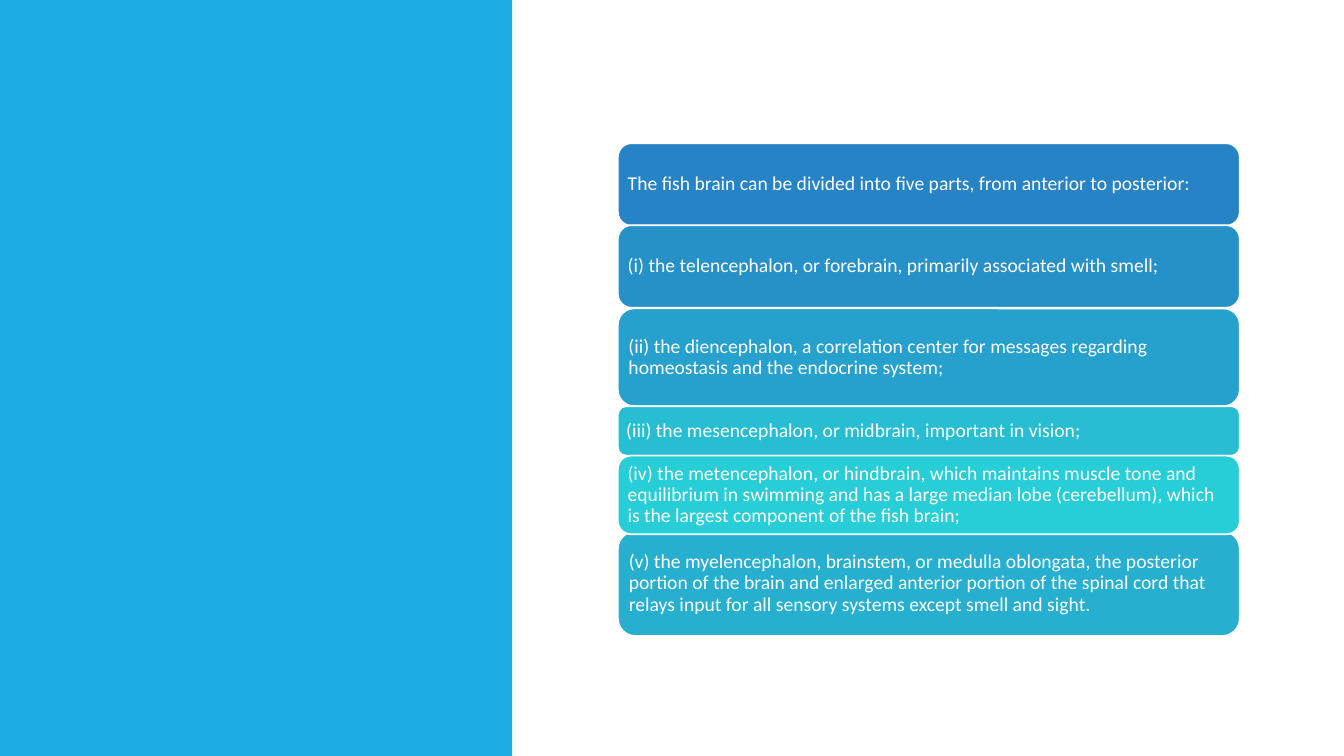
from dataclasses import dataclass

from pptx import Presentation
from pptx import util as u
from pptx.dml.color import RGBColor
from pptx.enum import shapes, text
from pptx.shapes.autoshape import Shape
from pptx.slide import Slide

PAGE_WIDTH, PAGE_HEIGHT = 960, 540
PANEL_WIDTH = 365.76
CARD_LEFT, CARD_WIDTH = 441.36, 444.24
WHITE = "FFFFFF"


@dataclass(frozen=True)
class Card:
    top: float
    height: float
    fill: str
    wording: str


# Back to front: the last part lies behind the third and fourth
CARDS = [
    Card(102.24, 59.04, "2683C6",
         "The fish brain can be divided into five parts, from anterior to posterior:"),
    Card(160.8, 59.04, "2691C9",
         "(i) the telencephalon, or forebrain, primarily associated with smell;"),
    Card(220.32, 69.84, "26A0CD",
         "(ii) the diencephalon, a correlation center for messages regarding "
         "homeostasis and the endocrine system;"),
    Card(379.44, 74.88, "27AFD0",
         "(v) the myelencephalon, brainstem, or medulla oblongata, the posterior "
         "portion of the brain and enlarged anterior portion of the spinal cord that "
         "relays input for all sensory systems except smell and sight."),
    Card(290.16, 35.28, "27BED4",
         "(iii) the mesencephalon, or midbrain, important in vision;"),
    Card(325.44, 56.16, "27CED7",
         "(iv) the metencephalon, or hindbrain, which maintains muscle tone and "
         "equilibrium in swimming and has a large median lobe (cerebellum), which "
         "is the largest component of the fish brain;"),
]

FRAME_FORMAT = {
    "word_wrap": True,
    "vertical_anchor": text.MSO_ANCHOR.MIDDLE,
    **{f"margin_{side}": u.Pt(4.2) for side in ("left", "top", "right", "bottom")},
}
PARAGRAPH_FORMAT = {"alignment": text.PP_ALIGN.LEFT, "line_spacing": 0.9}
FONT_FORMAT = {"name": "Calibri", "size": u.Pt(14)}


def colour(value: str) -> RGBColor:
    return RGBColor.from_string(value)


def apply_format(target: object, values: dict) -> None:
    for name, value in values.items():
        setattr(target, name, value)


def add_box(page: Slide, kind: shapes.MSO_SHAPE, left: float, top: float,
            width: float, height: float, fill: str) -> Shape:
    box = page.shapes.add_shape(kind, u.Pt(left), u.Pt(top), u.Pt(width), u.Pt(height))
    box.shadow.inherit = False
    box.fill.solid()
    box.fill.fore_color.rgb = colour(fill)
    box.line.fill.background()
    return box


def add_card(page: Slide, card: Card) -> None:
    box = add_box(page, shapes.MSO_SHAPE.ROUNDED_RECTANGLE,
                  CARD_LEFT, card.top, CARD_WIDTH, card.height, card.fill)
    box.line.color.rgb = colour(WHITE)
    box.line.width = u.Pt(1.25)
    apply_format(box.text_frame, FRAME_FORMAT)
    para = box.text_frame.paragraphs[0]
    apply_format(para, PARAGRAPH_FORMAT)
    span = para.add_run()
    span.text = card.wording
    apply_format(span.font, FONT_FORMAT)
    span.font.color.rgb = colour(WHITE)


def main() -> None:
    deck = Presentation()
    deck.slide_width, deck.slide_height = u.Pt(PAGE_WIDTH), u.Pt(PAGE_HEIGHT)
    page = deck.slides.add_slide(deck.slide_layouts.get_by_name("Blank"))

    # Side panel
    add_box(page, shapes.MSO_SHAPE.RECTANGLE, 0, 0, PANEL_WIDTH, PAGE_HEIGHT, "1CADE4")

    # Parts of the brain
    for card in CARDS:
        add_card(page, card)

    deck.save("out.pptx")


if __name__ == "__main__":
    main()
